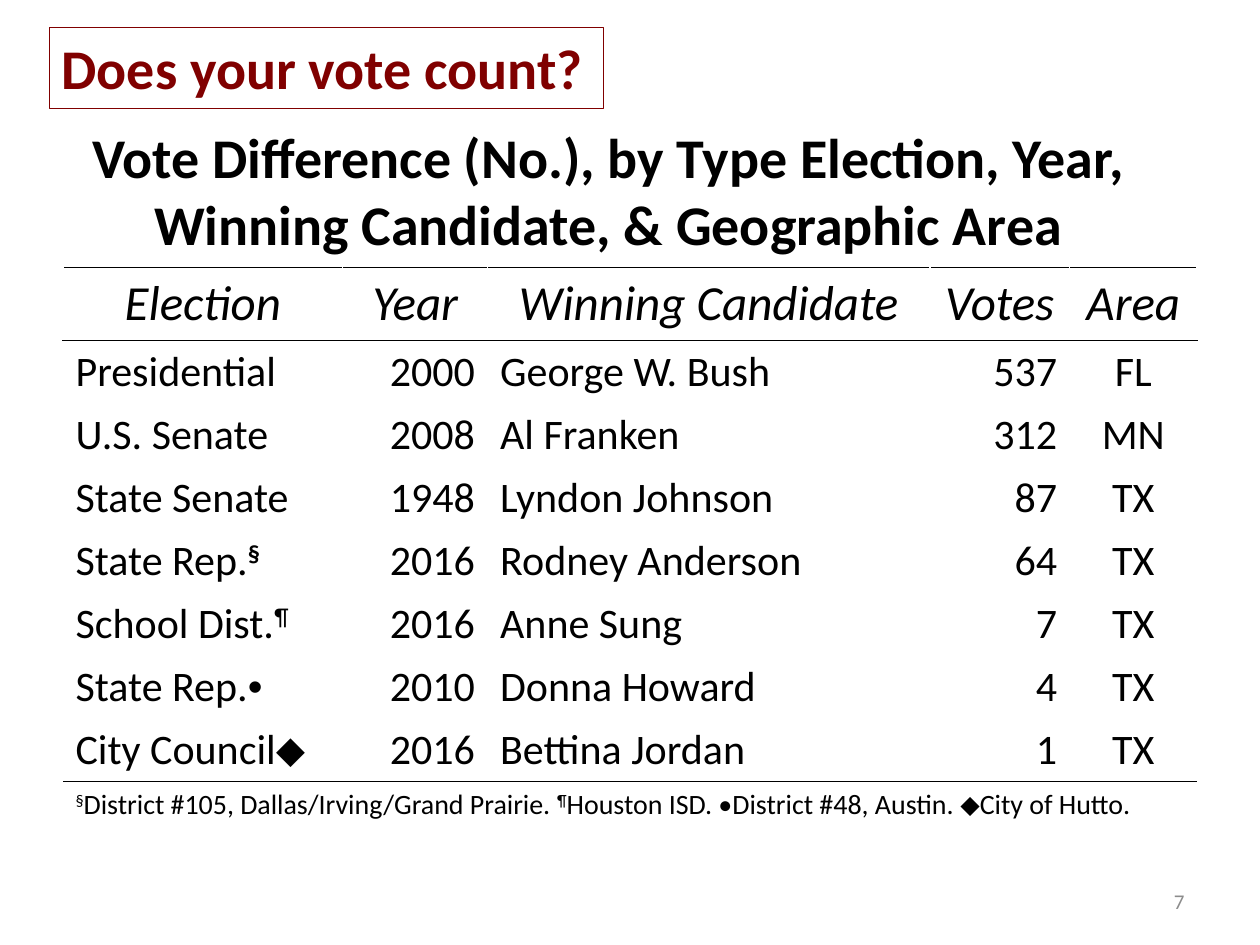
from pptx import Presentation
from pptx.dml.color import RGBColor
from pptx.enum.text import MSO_ANCHOR, MSO_AUTO_SIZE, PP_ALIGN
from pptx.oxml.ns import qn
from pptx.util import Inches, Pt
from lxml.etree import SubElement

BLACK = RGBColor(0x00, 0x00, 0x00)
WHITE = RGBColor(0xFF, 0xFF, 0xFF)
MAROON = RGBColor(0x80, 0x00, 0x00)
GRAY = RGBColor(0x8C, 0x8C, 0x8C)
FONT = "Calibri"
SUPERSCRIPTS = ("§", "¶")
SYMBOLS = ("•", "⬥")
HAIRLINE = (BLACK, 0.25)
GAP = (WHITE, 1)

COLUMN_WIDTHS = (2.22, 1.15, 3.51, 1.11, 1.01)
ROW_HEIGHTS = (0.58,) + (0.5,) * 7 + (0.4,)
ALIGNMENTS = (PP_ALIGN.LEFT, PP_ALIGN.RIGHT, PP_ALIGN.LEFT, PP_ALIGN.RIGHT, PP_ALIGN.CENTER)
HEADINGS = ("Election", "Year", "Winning Candidate", "Votes", "Area")
RESULTS = (
    (("Presidential",), "2000", "George W. Bush", "537", "FL"),
    (("U.S. Senate",), "2008", "Al Franken", "312", "MN"),
    (("State Senate",), "1948", "Lyndon Johnson", "87", "TX"),
    (("State Rep.", "§"), "2016", "Rodney Anderson", "64", "TX"),
    (("School Dist.", "¶"), "2016", "Anne Sung", "7", "TX"),
    (("State Rep.", "•"), "2010", "Donna Howard", "4", "TX"),
    (("City Council", "⬥"), "2016", "Bettina Jordan", "1", "TX"),
)
FOOTNOTE = (
    "§", "District #105, Dallas/Irving/Grand Prairie. ",
    "¶", "Houston ISD. •District #48, Austin. ",
    "⬥", "City of Hutto.",
)


def write(text_frame, parts, size, alignment, color=BLACK, bold=False, italic=False):
    """Write one paragraph from text parts, styling the reference marks."""
    paragraph = text_frame.paragraphs[0]
    paragraph.alignment = alignment
    for part in (parts,) if isinstance(parts, str) else parts:
        run = paragraph.add_run()
        run.text = part
        run.font.name = "Arial" if part in SYMBOLS else FONT
        run.font.size = Pt(size)
        run.font.bold = bold
        run.font.italic = italic
        run.font.color.rgb = color
        if part in SUPERSCRIPTS:
            run._r.get_or_add_rPr().set("baseline", "30000")


def add_text(slide, box, text, size, alignment, color, bold=False):
    """Add a wrapped, vertically centred text box."""
    shape = slide.shapes.add_textbox(*map(Inches, box))
    shape.text_frame.word_wrap = True
    shape.text_frame.vertical_anchor = MSO_ANCHOR.MIDDLE
    write(shape.text_frame, text, size, alignment, color, bold)
    return shape


def add_banner(slide, box, text):
    """Add the outlined question that sizes itself to its text."""
    shape = add_text(slide, box, text, 32, PP_ALIGN.LEFT, MAROON, bold=True)
    shape.line.color.rgb = MAROON
    shape.line.width = Pt(0.25)
    shape.text_frame.word_wrap = False
    shape.text_frame.auto_size = MSO_AUTO_SIZE.SHAPE_TO_FIT_TEXT
    shape.text_frame.vertical_anchor = MSO_ANCHOR.TOP


def style_cell(cell, **borders):
    """Clear the fill and draw only the borders given by side."""
    properties = cell._tc.get_or_add_tcPr()
    for side in "LRTB":
        line = SubElement(properties, qn(f"a:ln{side}"))
        if side not in borders:
            SubElement(line, qn("a:noFill"))
            continue
        color, width = borders[side]
        line.set("w", str(Pt(width)))
        fill = SubElement(line, qn("a:solidFill"))
        SubElement(fill, qn("a:srgbClr")).set("val", str(color))
    cell.fill.background()


def row_borders(row):
    """Return the borders shared by all cells of a row."""
    last = len(ROW_HEIGHTS) - 1
    if row == 0:
        return {"L": GAP, "R": GAP, "T": HAIRLINE, "B": HAIRLINE}
    if row in (1, last):
        return {"T": HAIRLINE}
    return {"B": HAIRLINE} if row == last - 1 else {}


def add_results_table(slide, left, top):
    """Add the election table with its heading row and footnote row."""
    rows, columns = len(ROW_HEIGHTS), len(COLUMN_WIDTHS)
    table = slide.shapes.add_table(
        rows, columns, Inches(left), Inches(top),
        Inches(sum(COLUMN_WIDTHS)), Inches(sum(ROW_HEIGHTS)),
    ).table
    table.first_row = False
    table.horz_banding = False
    for column, width in zip(table.columns, COLUMN_WIDTHS):
        column.width = Inches(width)
    for index, height in enumerate(ROW_HEIGHTS):
        table.rows[index].height = Inches(height)
        for cell in table.rows[index].cells:
            style_cell(cell, **row_borders(index))
    for column, heading in enumerate(HEADINGS):
        write(table.cell(0, column).text_frame, heading, 28, PP_ALIGN.CENTER, italic=True)
    for row, result in enumerate(RESULTS, start=1):
        for column, value in enumerate(result):
            write(table.cell(row, column).text_frame, value, 24, ALIGNMENTS[column])
    footnote = table.cell(rows - 1, 0)
    footnote.merge(table.cell(rows - 1, columns - 1))
    write(footnote.text_frame, FOOTNOTE, 16, PP_ALIGN.LEFT)
    table.cell(4, 0).text_frame.paragraphs[0].runs[1].font.bold = True


def main():
    """Build the slide and save it."""
    presentation = Presentation()
    presentation.slide_width = Inches(10)
    presentation.slide_height = Inches(7.5)
    slide = presentation.slides.add_slide(presentation.slide_layouts[6])
    add_text(
        slide, (0.33, 0.88, 9, 1.25),
        "Vote Difference (No.), by Type Election, Year, Winning Candidate, & Geographic Area",
        32, PP_ALIGN.CENTER, BLACK, bold=True,
    )
    add_results_table(slide, 0.5, 2.12)
    add_text(slide, (7.17, 6.95, 2.33, 0.4), "7", 12, PP_ALIGN.RIGHT, GRAY)
    add_banner(slide, (0.39, 0.22, 4.4, 0.64), "Does your vote count?")
    presentation.save("out.pptx")


if __name__ == "__main__":
    main()
